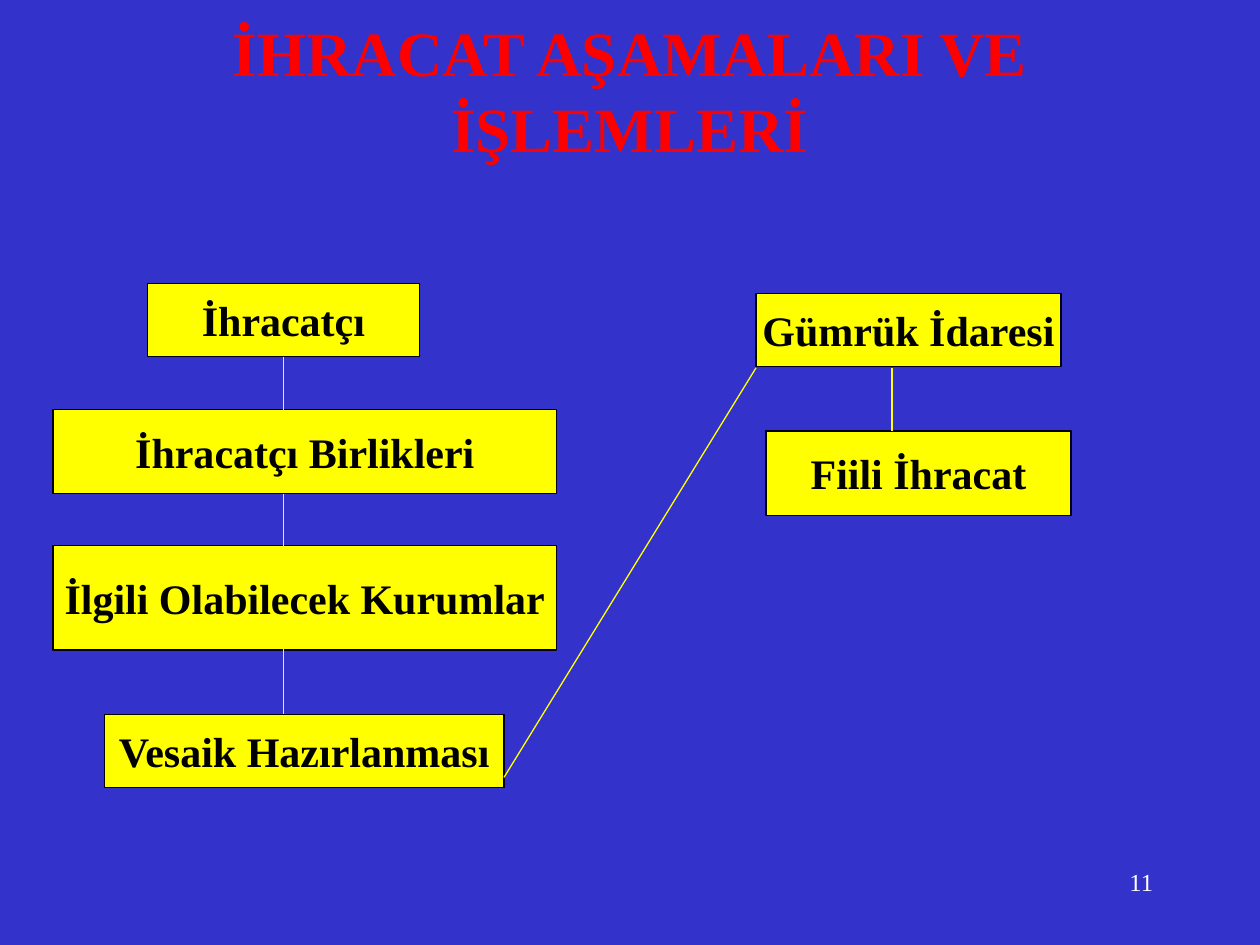
from typing import NamedTuple

from pptx import Presentation
from pptx.dml.color import RGBColor
from pptx.enum.shapes import MSO_CONNECTOR as Link, MSO_SHAPE as Shape
from pptx.enum.text import MSO_ANCHOR as Anchor, PP_ALIGN as Align
from pptx.oxml.ns import qn
from pptx.util import Inches, Pt

BLUE = RGBColor(0x33, 0x33, 0xCC)
YELLOW = RGBColor(0xFF, 0xFF, 0x00)
RED = RGBColor(0xFF, 0x00, 0x00)
BLACK = RGBColor(0x00, 0x00, 0x00)
WHITE = RGBColor(0xFF, 0xFF, 0xFF)
FONT = "Times New Roman"
BOTTOM = 2


class Box(NamedTuple):
    text: str
    left: float
    top: float
    width: float
    height: float


class Line(NamedTuple):
    x1: float
    y1: float
    x2: float
    y2: float


TITLE = Box("İHRACAT AŞAMALARI VE İŞLEMLERİ", 0.75, 0.25, 8.5, 0.92)
NUMBER = Box("11", 7.17, 6.83, 2.08, 0.5)
LEFT = [
    Box("İhracatçı", 1.17, 2.25, 2.16, 0.58),
    Box("İhracatçı Birlikleri", 0.42, 3.25, 4, 0.67),
    Box("İlgili Olabilecek Kurumlar", 0.42, 4.33, 4, 0.83),
    Box("Vesaik Hazırlanması", 0.83, 5.67, 3.17, 0.58),
]
RIGHT = [
    Box("Gümrük İdaresi", 6, 2.33, 2.42, 0.58),
    Box("Fiili İhracat", 6.08, 3.42, 2.42, 0.67),
]
FIRST = Line(2.25, 2.83, 2.25, 3.25)
DOWN = [Line(2.25, 3.92, 2.25, 4.58), Line(2.25, 5.08, 2.25, 5.67)]
ACROSS = [Line(7.08, 2.92, 7.08, 3.42), Line(6, 2.92, 4, 6.17)]


def place(box: Box) -> list[int]:
    return [Inches(v) for v in box[1:]]


def write(shape, text: str, align: Align, anchor: Anchor, wrap: bool, **style) -> None:
    """Fill the shape with one styled paragraph; style takes size, bold and color."""
    frame = shape.text_frame
    frame.word_wrap = wrap
    frame.vertical_anchor = anchor
    para = frame.paragraphs[0]
    para.alignment = align
    run = para.add_run()
    run.text = text
    run.font.color.rgb = style.pop("color")
    for name, value in {"name": FONT, **style}.items():
        setattr(run.font, name, value)


def add_label(slide, box: Box, align: Align, anchor: Anchor, **style) -> None:
    write(slide.shapes.add_textbox(*place(box)), box.text, align, anchor, True, **style)


def add_step(slide, box: Box):
    shape = slide.shapes.add_shape(Shape.RECTANGLE, *place(box))
    shape.shadow.inherit = False
    shape.fill.solid()
    shape.fill.fore_color.rgb = YELLOW
    shape.line.color.rgb = BLACK
    shape.line.width = Pt(0.75)
    write(shape, box.text, Align.CENTER, Anchor.MIDDLE, False,
          size=Pt(24), bold=True, color=BLACK)
    return shape


def add_line(slide, line: Line):
    link = slide.shapes.add_connector(Link.STRAIGHT, *[Inches(v) for v in line])
    link.line.color.rgb = YELLOW
    link.line.width = Pt(0.75)
    props = link._element.spPr
    props.append(props.makeelement(qn("a:effectLst"), {}))
    return link


def main() -> None:
    deck = Presentation()
    deck.slide_width, deck.slide_height = Inches(10), Inches(7.5)
    slide = deck.slides.add_slide(deck.slide_layouts[6])
    slide.background.fill.solid()
    slide.background.fill.fore_color.rgb = BLUE

    add_label(slide, NUMBER, Align.RIGHT, Anchor.TOP, size=Pt(14), color=WHITE)
    add_label(slide, TITLE, Align.CENTER, Anchor.MIDDLE,
              size=Pt(36), bold=True, color=RED)

    steps = [add_step(slide, box) for box in LEFT]
    add_line(slide, FIRST).begin_connect(steps[0], BOTTOM)
    for line in DOWN:
        add_line(slide, line)
    for box in RIGHT:
        add_step(slide, box)
    for line in ACROSS:
        add_line(slide, line)

    deck.save("out.pptx")


if __name__ == "__main__":
    main()
